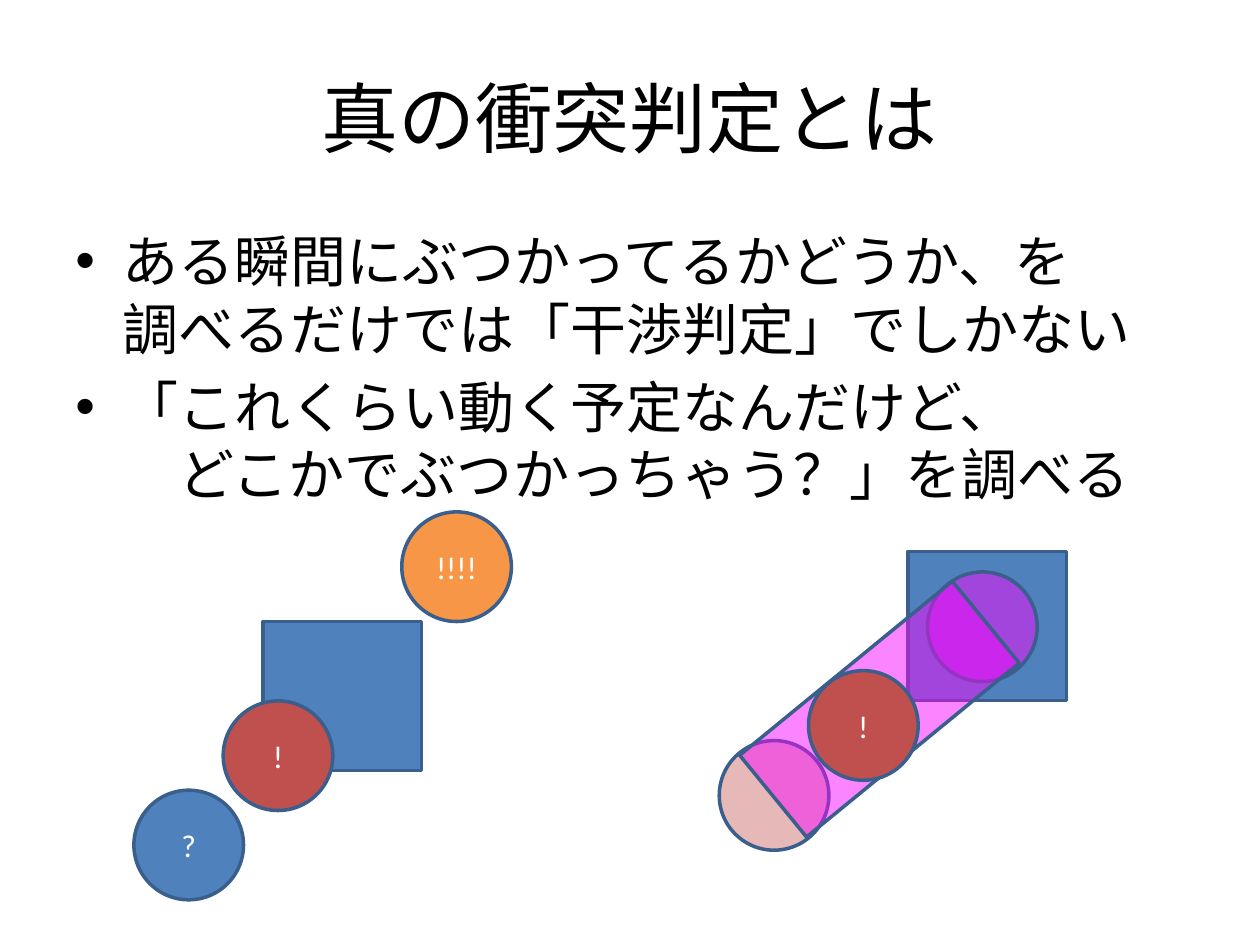
from lxml import etree
from pptx import Presentation
from pptx.dml.color import RGBColor
from pptx.enum.shapes import MSO_SHAPE
from pptx.enum.text import MSO_ANCHOR, PP_ALIGN
from pptx.oxml.ns import qn
from pptx.util import Cm, Pt

RECT, CIRCLE = MSO_SHAPE.RECTANGLE, MSO_SHAPE.OVAL
MIDDLE, CENTER = MSO_ANCHOR.MIDDLE, PP_ALIGN.CENTER
BLACK = RGBColor(0x00, 0x00, 0x00)
WHITE = RGBColor(0xFF, 0xFF, 0xFF)
BLUE = RGBColor(0x4F, 0x81, 0xBD)
RED = RGBColor(0xC0, 0x50, 0x4D)
ORANGE = RGBColor(0xF7, 0x96, 0x46)
PINK = RGBColor(0xE6, 0xB9, 0xB8)
MAGENTA = RGBColor(0xF7, 0x07, 0xFD)
OUTLINE = RGBColor(0x3A, 0x5F, 0x8C)
JAPANESE, LATIN = "Noto Sans CJK JP", "Calibri"
BALL = 2.21
BLOCK = (3.2, 3.0)


def add_japanese(paragraph, text, size):
    run = paragraph.add_run()
    run.text = text
    run.font.size = Pt(size)
    run.font.name = JAPANESE
    run.font.color.rgb = BLACK
    etree.SubElement(run.font._element, qn("a:ea"), typeface=JAPANESE)


def add_figure(kind, left, top, width, height, color, mark="", alpha=100):
    figure = slide.shapes.add_shape(kind, Cm(left), Cm(top), Cm(width), Cm(height))
    figure.shadow.inherit = False
    figure.fill.solid()
    figure.fill.fore_color.rgb = color
    if alpha < 100:
        srgb = figure.fill._xPr.find(".//" + qn("a:srgbClr"))
        etree.SubElement(srgb, qn("a:alpha"), val=str(alpha * 1000))
    figure.line.color.rgb = OUTLINE
    figure.line.width = Pt(2)
    if mark:
        frame = figure.text_frame
        frame.vertical_anchor = MIDDLE
        frame.paragraphs[0].alignment = CENTER
        run = frame.paragraphs[0].add_run()
        run.text = mark
        run.font.size = Pt(18)
        run.font.name = LATIN
        run.font.color.rgb = WHITE
    return figure


prs = Presentation()
prs.slide_width, prs.slide_height = Cm(25.4), Cm(19.05)
slide = prs.slides.add_slide(prs.slide_layouts[6])

# Title
title = slide.shapes.add_textbox(Cm(1.27), Cm(0.76), Cm(22.86), Cm(3.18)).text_frame
title.word_wrap = True
title.vertical_anchor = MIDDLE
title.paragraphs[0].alignment = CENTER
add_japanese(title.paragraphs[0], "真の衝突判定とは", 44)

# Bulleted explanation
points = [
    ("ある瞬間にぶつかってるかどうか、を", "調べるだけでは「干渉判定」でしかない"),
    ("「これくらい動く予定なんだけど、", "　どこかでぶつかっちゃう？」を調べる"),
]
body = slide.shapes.add_textbox(Cm(1.27), Cm(4.45), Cm(22.86), Cm(12.57)).text_frame
body.word_wrap = True
for index, (first_line, second_line) in enumerate(points):
    point = body.add_paragraph() if index else body.paragraphs[0]
    point.space_before = Pt(6.4)
    point.line_spacing = Pt(38.4)
    props = point._p.get_or_add_pPr()
    props.set("marL", str(Cm(0.95)))
    props.set("indent", str(-Cm(0.95)))
    etree.SubElement(props, qn("a:buFont"), typeface="Arial")
    etree.SubElement(props, qn("a:buChar"), char="•")
    add_japanese(point, first_line, 32)
    point.add_line_break()
    add_japanese(point, second_line, 32)

# Left: separate moments of a moving ball
add_figure(RECT, 5.3, 12.53, *BLOCK, BLUE)
for left, top, color, mark in [
    (2.7, 15.93, BLUE, "?"),
    (4.5, 14.13, RED, "!"),
    (8.1, 10.32, ORANGE, "!!!!"),
]:
    add_figure(CIRCLE, left, top, BALL, BALL, color, mark)

# Right: the volume swept by the ball
add_figure(RECT, 18.3, 11.12, *BLOCK, BLUE)
add_figure(CIRCLE, 14.5, 14.93, BALL, BALL, PINK)
add_figure(CIRCLE, 18.7, 11.53, BALL, BALL, MAGENTA, alpha=49)
sweep = add_figure(RECT, 14.96, 13.23, 5.54, 2.13, MAGENTA, alpha=49)
sweep.rotation = 320.7
add_figure(CIRCLE, 16.3, 13.52, BALL, BALL, RED, "!")

prs.save("out.pptx")
